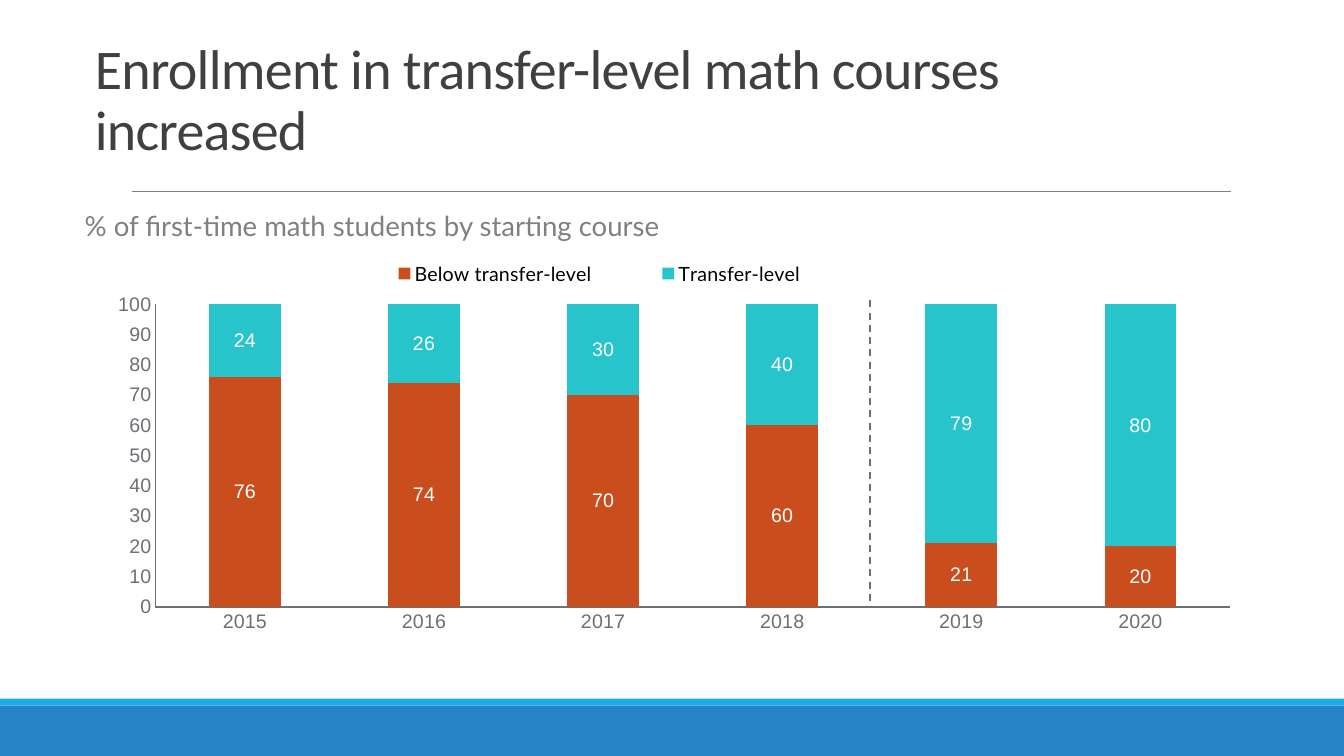
from lxml import etree
from pptx import Presentation
from pptx import util as u
from pptx.chart.data import CategoryChartData
from pptx.dml.color import RGBColor
from pptx.enum import chart as ch, dml, shapes, text
from pptx.oxml import parse_xml
from pptx.oxml.ns import nsdecls, qn

GREY = "6C7075"
SERIES = [
    ("Below transfer-level", "CA4D1D", (76, 74, 70, 60, 21, 20)),
    ("Transfer-level", "28C4CC", (24, 26, 30, 40, 79, 80)),
]


def rgb(value):
    """Return the colour for a hex string."""
    return RGBColor.from_string(value)


def apply(obj, **fmt):
    """Set every given attribute on an object."""
    for key, value in fmt.items():
        setattr(obj, key, value)


def style_font(font, name, size, color):
    """Set typeface, size and colour of a font."""
    apply(font, name=name, size=u.Pt(size), bold=False)
    font.color.rgb = rgb(color)


def add_bar(s, top, height, color):
    """Add a full-width band."""
    sp = s.shapes.add_shape(shapes.MSO_SHAPE.RECTANGLE, 0, u.Pt(top), u.Pt(960), u.Pt(height))
    sp.shadow.inherit = False
    sp.fill.solid()
    sp.fill.fore_color.rgb = rgb(color)
    sp.line.fill.background()


def add_line(s, x1, y1, x2, y2, color, width, dash=None):
    """Add a straight line without shadow."""
    c = s.shapes.add_connector(shapes.MSO_CONNECTOR.STRAIGHT, *map(u.Pt, (x1, y1, x2, y2)))
    c.line.color.rgb = rgb(color)
    apply(c.line, width=u.Pt(width), dash_style=dash)
    etree.SubElement(c._element.spPr, qn("a:effectLst"))


def fill_text(sp, box, content, font, frame, para):
    """Place a text shape and write one formatted paragraph in it."""
    apply(sp, **dict(zip(("left", "top", "width", "height"), map(u.Pt, box))))
    tf = sp.text_frame
    apply(tf, word_wrap=True, auto_size=text.MSO_AUTO_SIZE.NONE, **frame)
    p = tf.paragraphs[0]
    apply(p, alignment=text.PP_ALIGN.LEFT, **para)
    r = p.add_run()
    r.text = content
    style_font(r.font, *font)
    return r


def manual_layout(x, y, w, h, inner=False):
    """Return a chart layout element in fractions of the chart."""
    target = '<c:layoutTarget val="inner"/>' if inner else ""
    return parse_xml(
        f'<c:layout {nsdecls("c")}><c:manualLayout>{target}'
        '<c:xMode val="edge"/><c:yMode val="edge"/>'
        f'<c:x val="{x}"/><c:y val="{y}"/><c:w val="{w}"/><c:h val="{h}"/>'
        "</c:manualLayout></c:layout>")


def style_axis(axis):
    """Give an axis a plain grey line and grey labels without ticks."""
    apply(axis, major_tick_mark=ch.XL_TICK_MARK.NONE, minor_tick_mark=ch.XL_TICK_MARK.NONE,
          has_major_gridlines=False)
    axis.format.line.color.rgb = rgb(GREY)
    axis.format.line.width = u.Pt(1)
    style_font(axis.tick_labels.font, "Arial", 14, GREY)


def style_series(series, color):
    """Colour a series and label its columns in the middle."""
    series.format.fill.solid()
    series.format.fill.fore_color.rgb = rgb(color)
    labels = series.data_labels
    apply(labels, show_value=True, position=ch.XL_LABEL_POSITION.CENTER,
          number_format="0", number_format_is_linked=False)
    style_font(labels.font, "Arial", 14, "FFFFFF")


def add_enrollment_chart(s):
    """Add the stacked columns of students by starting course."""
    data = CategoryChartData(number_format="0")
    data.categories = [str(year) for year in range(2015, 2021)]
    for name, _, values in SERIES:
        data.add_series(name, values)
    frame = s.shapes.add_chart(ch.XL_CHART_TYPE.COLUMN_STACKED, u.Pt(-22.3), u.Pt(179.3),
                               u.Pt(901.4), u.Pt(291.6), data)
    chart = frame.chart
    apply(chart, has_title=False, has_legend=True)
    style_font(chart.font, "Arial", 14, GREY)
    style_axis(chart.category_axis)
    style_axis(chart.value_axis)
    apply(chart.value_axis, minimum_scale=0, maximum_scale=100, major_unit=10)
    plot = chart.plots[0]
    apply(plot, gap_width=150, overlap=100, vary_by_categories=False)
    for series, (_, color, _) in zip(plot.series, SERIES):
        style_series(series, color)
    legend = chart.legend
    apply(legend, position=ch.XL_LEGEND_POSITION.TOP, include_in_layout=False)
    style_font(legend.font, "Lato", 14, "000000")
    area = chart._chartSpace.chart.plotArea
    for old in area.findall(qn("c:layout")):
        area.remove(old)
    area.insert(0, manual_layout(0.148, 0.131, 0.852, 0.741, inner=True))
    for old in legend._element.findall(qn("c:layout")):
        legend._element.remove(old)
    legend._element.find(qn("c:legendPos")).addnext(manual_layout(0.29, 0.01, 0.42, 0.09))


def main():
    """Build and save the slide."""
    prs = Presentation()
    apply(prs, slide_width=u.Pt(960), slide_height=u.Pt(540))
    s = prs.slides.add_slide(prs.slide_layouts[5])
    add_bar(s, 504, 36, "2683C6")
    add_bar(s, 499, 5, "1CADE4")
    add_line(s, 94.3, 136.8, 879, 136.8, "808080", 0.5)
    r = fill_text(s.shapes.title, (60.5, 42.5, 818.6, 77),
                  "Enrollment in transfer-level math courses increased",
                  ("Calibri", 40, "404040"),
                  {"vertical_anchor": text.MSO_ANCHOR.BOTTOM}, {"line_spacing": 0.9})
    r.font._element.set("spc", "-50")
    fill_text(s.shapes.add_textbox(0, 0, 0, 0), (60.5, 151.9, 788.4, 24.5),
              "% of first-time math students by starting course",
              ("Lato", 19.7, "808080"), {"margin_left": 0, "margin_right": 0},
              {"line_spacing": 0.7, "space_before": u.Pt(12), "space_after": u.Pt(2)})
    add_enrollment_chart(s)
    add_line(s, 621.4, 214.6, 621.4, 432.7, GREY, 1.25, dml.MSO_LINE.DASH)
    prs.save("out.pptx")


if __name__ == "__main__":
    main()
